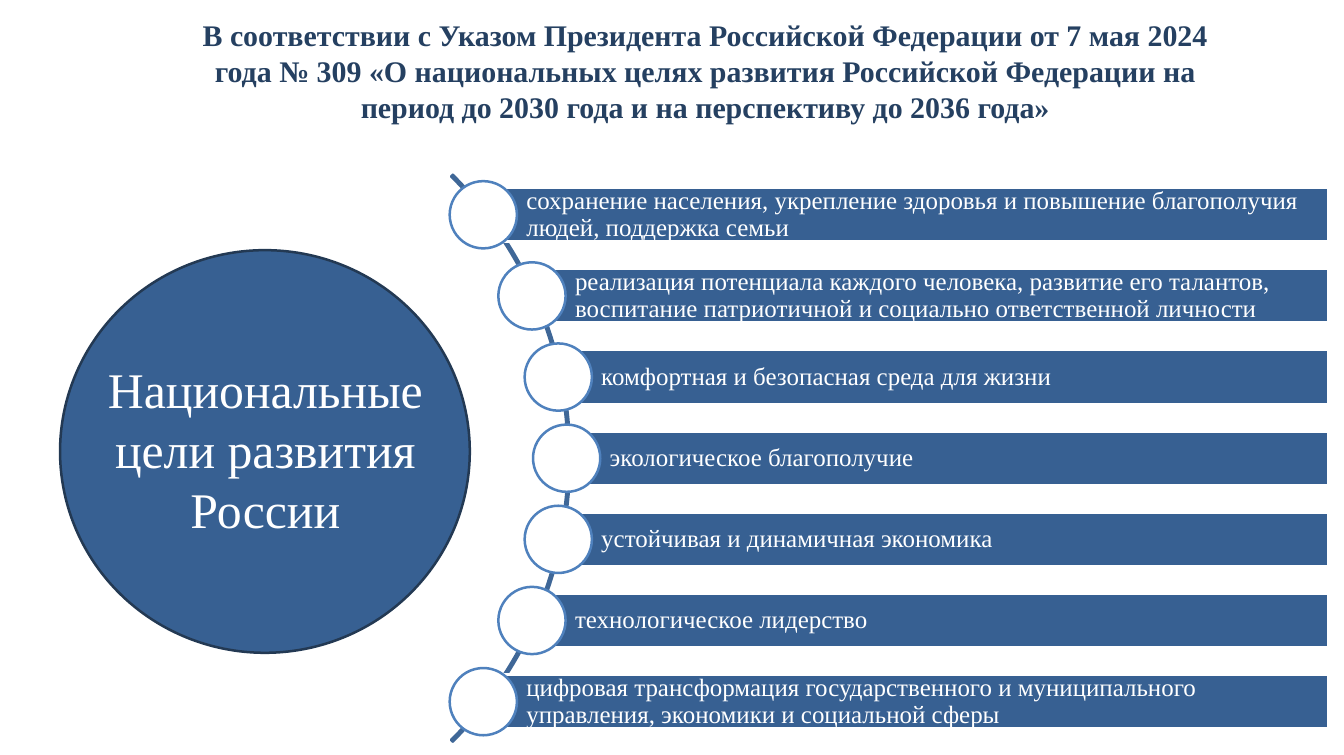
from dataclasses import dataclass
from math import sqrt

from pptx import Presentation, util as u
from pptx.dml.color import RGBColor
from pptx.enum import shapes, text

WIDE, HIGH = 14.99, 8.42
TITLE = ("В соответствии с Указом Президента Российской Федерации от 7 мая 2024 года "
         "№ 309 «О национальных целях развития Российской Федерации на период "
         "до 2030 года и на перспективу до 2036 года»")
HUB = "Национальные цели развития России"
GOALS = [
    "сохранение населения, укрепление здоровья и повышение благополучия людей, "
    "поддержка семьи",
    "реализация потенциала каждого человека, развитие его талантов, воспитание "
    "патриотичной и социально ответственной личности",
    "комфортная и безопасная среда для жизни",
    "экологическое благополучие",
    "устойчивая и динамичная экономика",
    "технологическое лидерство",
    "цифровая трансформация государственного и муниципального управления, "
    "экономики и социальной сферы",
]

# Arc centre and radii, row pitch and the right edge of the bars, in inches
MID_X, MID_Y = 1.89, 5.11
ARC, ORBIT = 4.47, 4.43
PITCH, BAR, DOT, EDGE = 0.905, 0.6, 0.75, 14.81


@dataclass(frozen=True)
class Theme:
    font: str = "Times New Roman"
    fill: str = "376092"
    rim: str = "233953"
    arc: str = "3F6797"
    ring: str = "4F81BD"
    head: str = "254061"
    white: str = "FFFFFF"
    title: int = 24
    hub: int = 40
    goal: int = 20
    line: int = 2


T = Theme()
KIND = shapes.MSO_SHAPE


def rgb(code):
    return RGBColor.from_string(code)


def box(*sizes):
    return [u.Inches(s) for s in sizes]


def draw(slide, kind, place, fill, line):
    shape = slide.shapes.add_shape(kind, *box(*place))
    shape.shadow.inherit = False
    shape.fill.solid()
    shape.fill.fore_color.rgb = rgb(fill)
    shape.line.color.rgb = rgb(line)
    shape.line.width = u.Pt(T.line)
    return shape


def write(shape, words, size, color, align, pads=(0, 0, 0, 0), bold=False):
    """Fill the shape with one paragraph; pads are left, top, right, bottom."""
    frame = shape.text_frame
    frame.word_wrap = True
    (frame.margin_left, frame.margin_top,
     frame.margin_right, frame.margin_bottom) = box(*pads)
    para = frame.paragraphs[0]
    para.text = words
    para.alignment = align
    font = para.font
    font.name, font.size, font.bold = T.font, u.Pt(size), bold
    font.color.rgb = rgb(color)
    return para


def label(slide, place, words, size, color, bold=False):
    shape = slide.shapes.add_textbox(*box(*place))
    write(shape, words, size, color, text.PP_ALIGN.CENTER, bold=bold)


def arc(slide):
    place = (MID_X - ARC, MID_Y - ARC, 2 * ARC, 2 * ARC)
    shape = draw(slide, KIND.BLOCK_ARC, place, T.arc, T.arc)
    # Angles count in units of 5/3 degree: from 315 round to 45 degrees
    for i, value in enumerate((189, 27, 0.003)):
        shape.adjustments[i] = value


def goal(slide, step, words):
    """Draw a bar and its dot, step rows away from the middle of the arc."""
    y = MID_Y + step * PITCH
    x = MID_X + sqrt(ORBIT ** 2 - (step * PITCH) ** 2)
    bar = draw(slide, KIND.RECTANGLE, (x, y - BAR / 2, EDGE - x, BAR), T.fill, T.white)
    para = write(bar, words, T.goal, T.white, text.PP_ALIGN.LEFT,
                 pads=(0.48, 0.06, 0.06, 0.06))
    para.line_spacing = 0.9
    bar.text_frame.vertical_anchor = text.MSO_ANCHOR.MIDDLE
    draw(slide, KIND.OVAL, (x - DOT / 2, y - DOT / 2, DOT, DOT), T.white, T.ring)


def main():
    deck = Presentation()
    deck.slide_width, deck.slide_height = box(WIDE, HIGH)
    slide = deck.slides.add_slide(deck.slide_layouts[6])
    draw(slide, KIND.OVAL, (0.67, 2.79, 4.57, 4.49), T.fill, T.rim)
    label(slide, (0.99, 4, 3.94, 2.69), HUB, T.hub, T.white)
    arc(slide)
    for i, words in enumerate(GOALS):
        goal(slide, i - len(GOALS) // 2, words)
    label(slide, (2.06, 0.19, 11.61, 1.21), TITLE, T.title, T.head, bold=True)
    deck.save("out.pptx")


if __name__ == "__main__":
    main()
